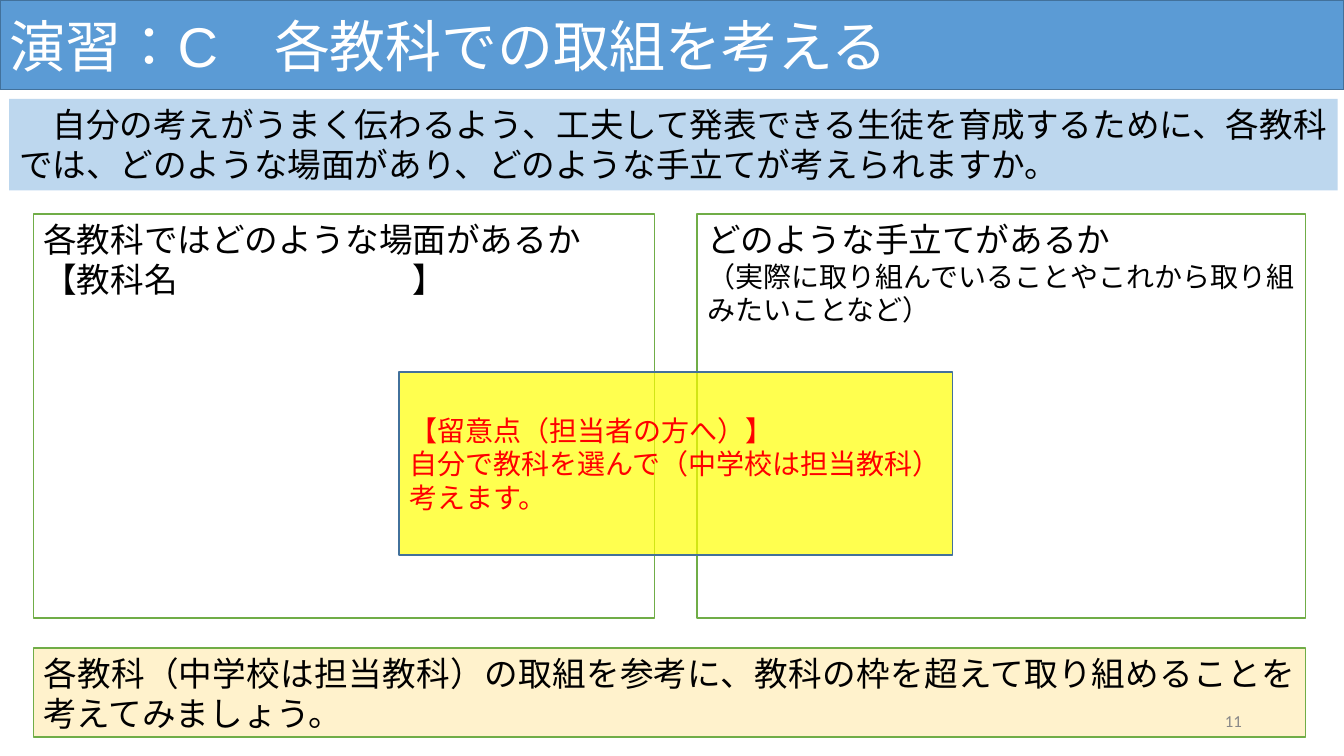
from lxml import etree
from pptx import Presentation
from pptx.dml.color import RGBColor
from pptx.enum.lang import MSO_LANGUAGE_ID
from pptx.enum.shapes import MSO_SHAPE
from pptx.enum.text import MSO_ANCHOR, PP_ALIGN
from pptx.oxml.ns import qn
from pptx.util import Cm, Pt

RECT = MSO_SHAPE.RECTANGLE
JAPANESE = MSO_LANGUAGE_ID.JAPANESE
TOP, MIDDLE = MSO_ANCHOR.TOP, MSO_ANCHOR.MIDDLE
LEFT, RIGHT, JUSTIFY = PP_ALIGN.LEFT, PP_ALIGN.RIGHT, PP_ALIGN.JUSTIFY

COLORS = {
    "blue": "5B9BD5", "navy": "42719B", "pale_blue": "BDD7EE",
    "green": "70AD47", "cream": "FFF2CC", "yellow": "FFFF00",
    "white": "FFFFFF", "black": "000000", "red": "FF0000", "gray": "888888",
}

# Each line of text is (wording, size in points)
TITLE = [("演習：C　各教科での取組を考える", 40)]
QUESTION = [("　自分の考えがうまく伝わるよう、工夫して発表できる生徒を育成するために、"
             "各教科では、どのような場面があり、どのような手立てが考えられますか。", 24)]
SCENES = [("各教科ではどのような場面があるか", 24), ("【教科名\t】", 24)]
METHODS = [("どのような手立てがあるか", 24),
           ("（実際に取り組んでいることやこれから取り組みたいことなど）", 20)]
SUMMARY = [("各教科（中学校は担当教科）の取組を参考に、"
            "教科の枠を超えて取り組めることを考えてみましょう。", 24)]
ADVICE = [("【留意点（担当者の方へ）】", 20),
          ("自分で教科を選んで（中学校は担当教科）考えます。", 20)]
PAGE_NUMBER = [("11", 12)]

# Layout in centimetres
SLIDE_W, SLIDE_H = 33.87, 19.05
MARGIN = 0.84
CONTENT_W = SLIDE_W - 2 * MARGIN - 0.13
PANEL_TOP, PANEL_H = 5.39, 10.18
SCENES_W, PANEL_GAP = 15.66, 1.07
METHODS_X = MARGIN + SCENES_W + PANEL_GAP
METHODS_W = CONTENT_W - SCENES_W - PANEL_GAP
SUBJECT_BLANK_END = 9.31
ADVICE_OPACITY = 69


def rgb(name):
    return RGBColor.from_string(COLORS[name])


def write(shape, lines, color, font="Arial", align=LEFT, anchor=TOP):
    frame = shape.text_frame
    frame.word_wrap = True
    frame.vertical_anchor = anchor
    for index, (wording, size) in enumerate(lines):
        paragraph = frame.paragraphs[0] if index == 0 else frame.add_paragraph()
        paragraph.alignment = align
        run = paragraph.add_run()
        run.text = wording
        run.font.size = Pt(size)
        run.font.name = font
        run.font.color.rgb = rgb(color)
        run.font.language_id = JAPANESE


def add_box(slide, box, fill, line, lines, color="black", **text_style):
    shape = slide.shapes.add_shape(RECT, *map(Cm, box))
    shape.shadow.inherit = False
    shape.fill.solid()
    shape.fill.fore_color.rgb = rgb(fill)
    if line:
        shape.line.color.rgb = rgb(line)
        shape.line.width = Pt(1)
    else:
        shape.line.fill.background()
    write(shape, lines, color, **text_style)
    return shape


def set_opacity(shape, percent):
    fill_color = shape.fill._xPr.find(qn("a:solidFill"))[0]
    etree.SubElement(fill_color, qn("a:alpha"), val=str(percent * 1000))


def set_tab_stop(paragraph, position):
    tabs = etree.SubElement(paragraph._p.get_or_add_pPr(), qn("a:tabLst"))
    etree.SubElement(tabs, qn("a:tab"), pos=str(Cm(position)), algn="l")


def main():
    deck = Presentation()
    deck.slide_width, deck.slide_height = Cm(SLIDE_W), Cm(SLIDE_H)
    slide = deck.slides.add_slide(deck.slide_layouts[6])

    add_box(slide, (0, 0, SLIDE_W, 2.26), "blue", "navy", TITLE, "white", anchor=MIDDLE)
    scenes = add_box(slide, (MARGIN, PANEL_TOP, SCENES_W, PANEL_H),
                     "white", "green", SCENES, align=JUSTIFY)
    set_tab_stop(scenes.text_frame.paragraphs[1], SUBJECT_BLANK_END)
    add_box(slide, (0.23, 2.49, 33.48, 2.31), "pale_blue", None, QUESTION)
    add_box(slide, (METHODS_X, PANEL_TOP, METHODS_W, PANEL_H), "white", "green", METHODS)
    add_box(slide, (MARGIN, 16.33, CONTENT_W, 2.24), "cream", "green", SUMMARY, align=JUSTIFY)
    advice = add_box(slide, (10.06, 9.37, 13.94, 4.62), "yellow", "navy", ADVICE, "red",
                     font="Calibri", anchor=MIDDLE)
    set_opacity(advice, ADVICE_OPACITY)

    page_number = slide.shapes.add_textbox(Cm(23.93), Cm(17.65), Cm(7.62), Cm(1.02))
    write(page_number, PAGE_NUMBER, "gray", font="Calibri", align=RIGHT, anchor=MIDDLE)

    deck.save("out.pptx")


if __name__ == "__main__":
    main()
